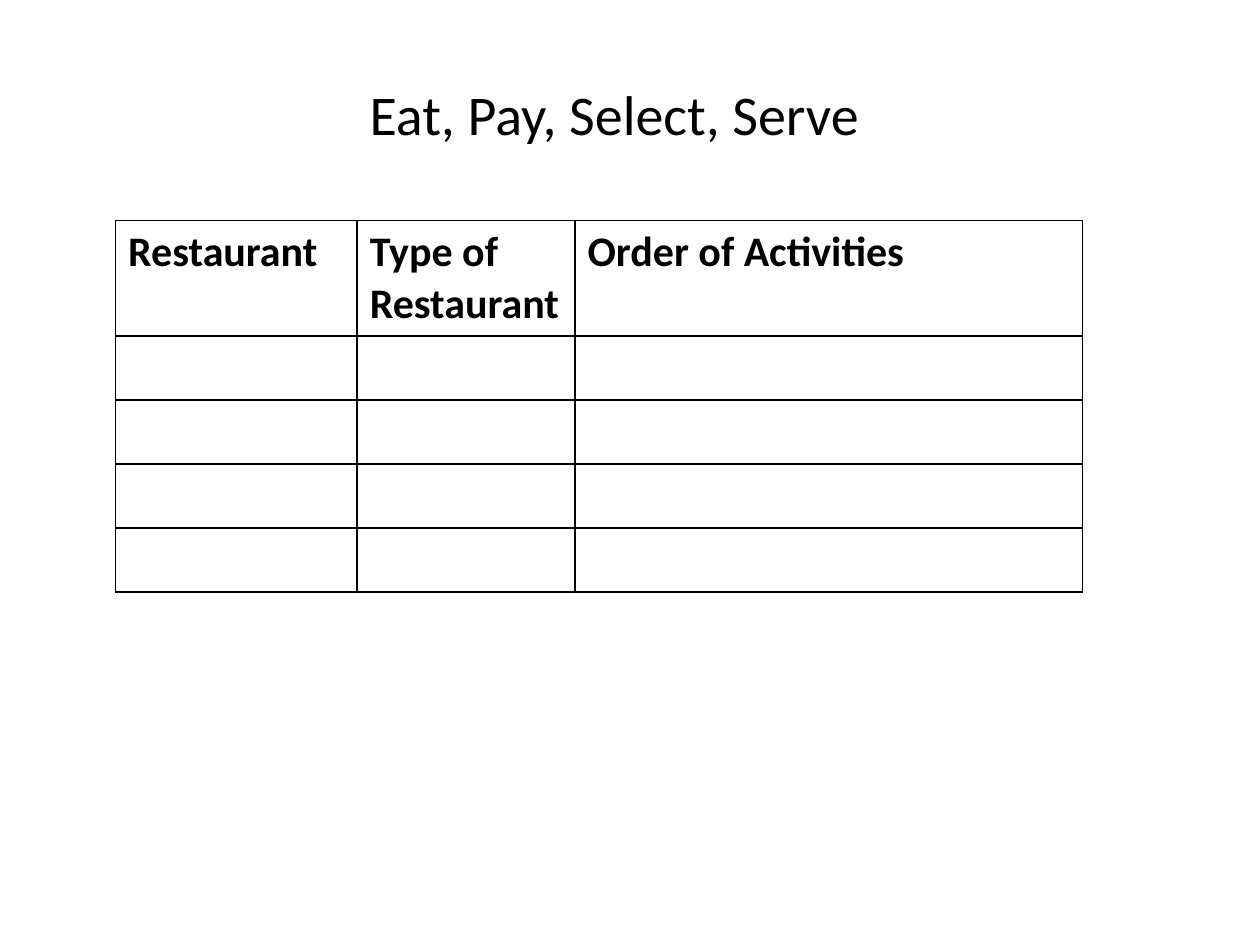
from lxml.etree import SubElement as Sub
from pptx import Presentation
from pptx.dml.color import RGBColor as Rgb
from pptx.oxml.ns import qn
from pptx.util import Cm, Pt

COLORS = {"ink": "000000", "paper": "FFFFFF"}
HEADS = ["Restaurant", "Type of Restaurant", "Order of Activities"]
WIDTHS = [4.87, 4.39, 10.23]
HEAD_H, ROW_H, BLANKS = 2.31, 1.29, 4


def write(frame, text, size=24, bold=False, color="ink"):
    run = frame.paragraphs[0].add_run()
    run.text = text
    font = run.font
    font.name, font.size, font.bold = "Calibri", Pt(size), bold
    font.color.rgb = Rgb.from_string(COLORS[color])


def border(cell, width=1, color="ink"):
    props = cell._tc.get_or_add_tcPr()
    for spot, side in enumerate(("lnL", "lnR", "lnT", "lnB")):
        line = Sub(props, qn(f"a:{side}"), w=str(Pt(width)))
        fill = Sub(line, qn("a:solidFill"))
        Sub(fill, qn("a:srgbClr"), val=COLORS[color])
        # Borders must come before the cell fill
        props.insert(spot, line)


def add_title(slide, left, top, width, height):
    box = slide.shapes.add_textbox(Cm(left), Cm(top), Cm(width), Cm(height))
    box.text_frame.word_wrap = False
    write(box.text_frame, "Eat, Pay, Select, Serve", size=32)


def add_grid(slide, left, top, width, height):
    frame = slide.shapes.add_table(BLANKS + 1, len(HEADS), Cm(left), Cm(top),
                                   Cm(width), Cm(height))
    table = frame.table
    table.first_row = table.horz_banding = False
    for col, size in zip(table.columns, WIDTHS):
        col.width = Cm(size)
    for num, row in enumerate(table.rows):
        row.height = Cm(ROW_H if num else HEAD_H)
    for cell in table.iter_cells():
        cell.fill.solid()
        cell.fill.fore_color.rgb = Rgb.from_string(COLORS["paper"])
        border(cell)
    # Header row; the rows below stay blank for answers
    for num, head in enumerate(HEADS):
        write(table.cell(0, num).text_frame, head, bold=True)


def main():
    deck = Presentation()
    deck.slide_width, deck.slide_height = Cm(25.4), Cm(19.05)
    slide = deck.slides.add_slide(deck.slide_layouts[6])
    add_grid(slide, 2.33, 4.45, sum(WIDTHS), HEAD_H + BLANKS * ROW_H)
    add_title(slide, 7.2, 1.47, 10.46, 1.63)
    deck.save("out.pptx")


if __name__ == "__main__":
    main()
